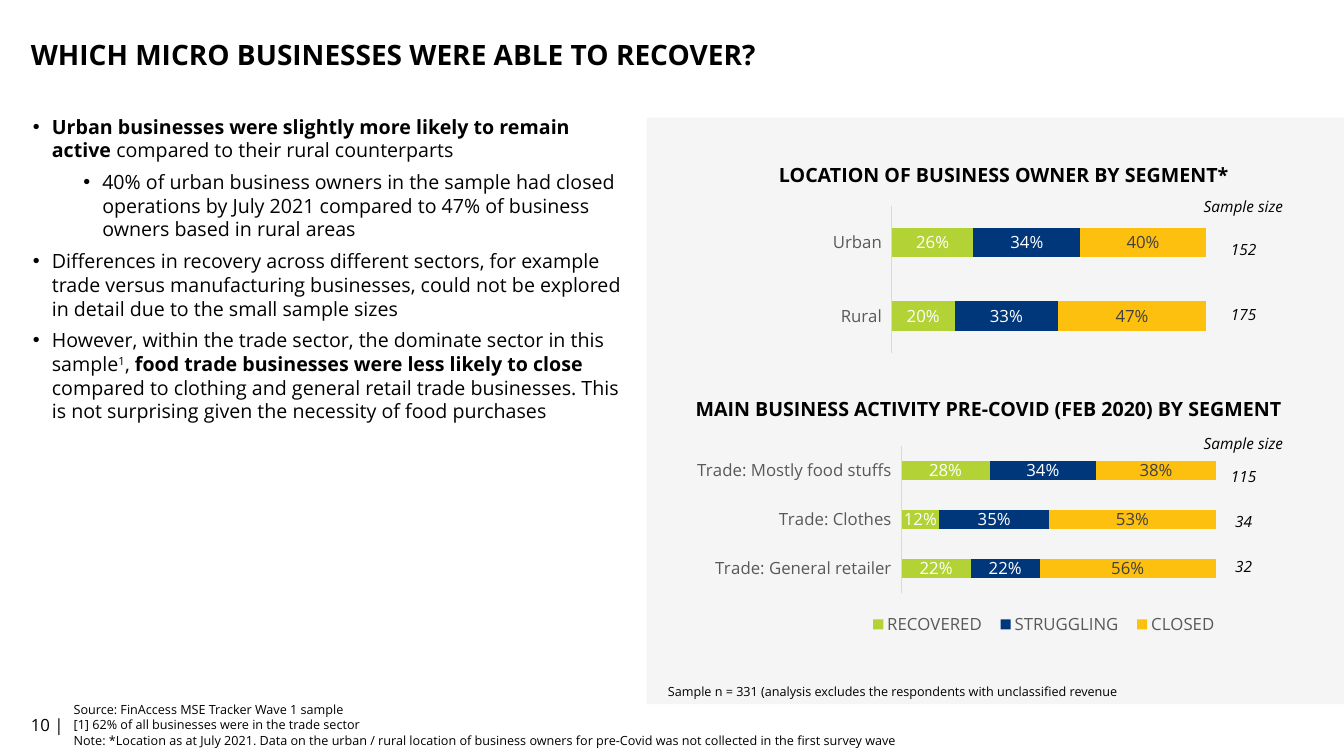
from dataclasses import dataclass

from lxml.etree import SubElement
from pptx import Presentation
from pptx.chart.data import CategoryChartData
from pptx.dml.color import RGBColor
from pptx.enum.chart import (XL_CHART_TYPE, XL_LABEL_POSITION,
                             XL_LEGEND_POSITION, XL_TICK_LABEL_POSITION,
                             XL_TICK_MARK)
from pptx.enum.shapes import MSO_SHAPE
from pptx.enum.text import MSO_ANCHOR, PP_ALIGN
from pptx.oxml import parse_xml
from pptx.oxml.ns import nsdecls, qn
from pptx.util import Pt


@dataclass(frozen=True)
class Theme:
    font: str = "Open Sans"
    black: str = "000000"
    white: str = "FFFFFF"
    dark: str = "404040"
    grey: str = "595959"
    line: str = "D9D9D9"
    panel: str = "F2F2F2"
    series: tuple = ("B3D235", "00377B", "FEC00F")
    title: int = 20
    body: int = 14
    label: int = 12
    sample: int = 11
    note: int = 9


T = Theme()
SEGMENTS = ("RECOVERED", "STRUGGLING", "CLOSED")
NO_GRID_STYLE = "{2D5ABB26-0587-4C30-8999-92F81FD0307C}"


def set_font(font, size, color=T.black, bold=False, italic=False):
    font.name, font.size = T.font, Pt(size)
    font.color.rgb = RGBColor.from_string(color)
    font.bold, font.italic = bold, italic


def add_run(p, text, size=T.body, bold=False, italic=False, sup=False):
    r = p.add_run()
    r.text = text
    set_font(r.font, size, bold=bold, italic=italic)
    if sup:
        r._r.get_or_add_rPr().set("baseline", "30000")


def add_text(s, text, box, anchor=MSO_ANCHOR.TOP, align=PP_ALIGN.LEFT,
             spacing=None, **fmt):
    tf = s.shapes.add_textbox(*map(Pt, box)).text_frame
    tf.word_wrap = True
    tf.vertical_anchor = anchor
    for i, line in enumerate(text.split("\n")):
        p = tf.add_paragraph() if i else tf.paragraphs[0]
        p.alignment = align
        p.line_spacing = spacing
        add_run(p, line, **fmt)


def add_bullets(s, items, box):
    """Each item is a level and a list of (text, format) runs."""
    tf = s.shapes.add_textbox(*map(Pt, box)).text_frame
    tf.word_wrap = True
    for i, (level, runs) in enumerate(items):
        p = tf.add_paragraph() if i else tf.paragraphs[0]
        p.level = level
        p.space_after = Pt(6)
        pPr = p._p.get_or_add_pPr()
        pPr.set("marL", str(Pt(13.5 + 36 * level)))
        pPr.set("indent", str(Pt(-13.5)))
        SubElement(pPr, qn("a:buFont")).set("typeface", "Arial")
        SubElement(pPr, qn("a:buChar")).set("char", "•")
        for text, fmt in runs:
            add_run(p, text, **fmt)


def add_panel(s, box):
    sp = s.shapes.add_shape(MSO_SHAPE.RECTANGLE, *map(Pt, box))
    sp.shadow.inherit = False
    sp.fill.solid()
    sp.fill.fore_color.rgb = RGBColor.from_string(T.panel)
    color = sp._element.spPr.find(".//" + qn("a:srgbClr"))
    SubElement(color, qn("a:alpha")).set("val", "70000")
    sp.line.fill.background()


def manual_layout(x, y, w, h, inner=False):
    target = '<c:layoutTarget val="inner"/>' if inner else ""
    return parse_xml(
        f'<c:layout {nsdecls("c")}><c:manualLayout>{target}'
        '<c:xMode val="edge"/><c:yMode val="edge"/>'
        f'<c:x val="{x}"/><c:y val="{y}"/><c:w val="{w}"/><c:h val="{h}"/>'
        '</c:manualLayout></c:layout>')


def replace_layout(element, layout, index):
    for old in element.findall(qn("c:layout")):
        element.remove(old)
    element.insert(index, layout)


def add_segment_chart(s, rows, box, legend=False):
    """Rows run from top to bottom: category, then one share per segment."""
    data = CategoryChartData(number_format="0%")
    rows = rows[::-1]
    data.categories = [row[0] for row in rows]
    for i, name in enumerate(SEGMENTS, 1):
        data.add_series(name, [row[i] for row in rows])
    chart = s.shapes.add_chart(XL_CHART_TYPE.BAR_STACKED_100,
                               *map(Pt, box), data).chart
    set_font(chart.font, T.label, T.grey)
    chart.has_title = False

    # Axes
    cat, val = chart.category_axis, chart.value_axis
    cat.major_tick_mark = XL_TICK_MARK.NONE
    cat.tick_label_position = XL_TICK_LABEL_POSITION.LOW
    set_font(cat.tick_labels.font, T.label, T.grey)
    cat.format.line.color.rgb = RGBColor.from_string(T.line)
    cat.format.line.width = Pt(0.75)
    val.visible = False
    val.has_major_gridlines = False
    val.minimum_scale, val.maximum_scale = 0, 1

    # Bars and their labels
    plot = chart.plots[0]
    plot.gap_width, plot.overlap = 150, 100
    plot.vary_by_categories = False
    for ser, color, ink in zip(plot.series, T.series,
                               (T.white, T.white, T.dark)):
        ser.format.fill.solid()
        ser.format.fill.fore_color.rgb = RGBColor.from_string(color)
        labels = ser.data_labels
        labels.show_value = True
        labels.position = XL_LABEL_POSITION.CENTER
        labels.number_format, labels.number_format_is_linked = "0%", False
        set_font(labels.font, T.label, ink)
    replace_layout(chart._chartSpace.chart.plotArea,
                   manual_layout(0.43, 0.03, 0.53, 0.71, inner=True), 0)

    chart.has_legend = legend
    if legend:
        chart.legend.position = XL_LEGEND_POSITION.BOTTOM
        chart.legend.include_in_layout = False
        set_font(chart.legend.font, T.label, T.grey)
        replace_layout(chart.legend._element,
                       manual_layout(0.36, 0.82, 0.62, 0.14), 1)


def add_sample_sizes(s, sizes, left, top, row_height):
    table = s.shapes.add_table(len(sizes), 1, Pt(left), Pt(top), Pt(44.6),
                               Pt(row_height * len(sizes))).table
    table.first_row = table.horz_banding = False
    table._tbl.tblPr.find(qn("a:tableStyleId")).text = NO_GRID_STYLE
    for i, size in enumerate(sizes):
        table.rows[i].height = Pt(row_height)
        cell = table.cell(i, 0)
        cell.fill.background()
        cell.vertical_anchor = MSO_ANCHOR.MIDDLE
        cell.margin_left = cell.margin_right = cell.margin_top = Pt(0.7)
        cell.margin_bottom = 0
        p = cell.text_frame.paragraphs[0]
        p.alignment = PP_ALIGN.CENTER
        add_run(p, str(size), T.sample, italic=True)


def main():
    prs = Presentation()
    prs.slide_width, prs.slide_height = Pt(960), Pt(540)
    s = prs.slides.add_slide(prs.slide_layouts[6])
    bold, plain = {"bold": True}, {}

    # Panel, title and footer
    add_panel(s, (462, 84, 498, 419))
    add_text(s, "WHICH MICRO BUSINESSES WERE ABLE TO RECOVER?",
             (15, 3.5, 848, 73.5), MSO_ANCHOR.MIDDLE, spacing=0.9,
             size=T.title, bold=True)
    add_text(s, "10 |", (15, 503.5, 50, 28.5), MSO_ANCHOR.MIDDLE, size=T.label)
    add_text(s, "Source: FinAccess MSE Tracker Wave 1 sample\n"
             "[1] 62% of all businesses were in the trade sector\n"
             "Note: *Location as at July 2021. Data on the urban / rural "
             "location of business owners for pre-Covid was not collected in "
             "the first survey wave",
             (45.5, 503.5, 798.5, 28.5), MSO_ANCHOR.MIDDLE, size=T.note)

    # Findings
    add_bullets(s, [
        (0, [("Urban businesses were slightly more likely to remain active ",
              bold), ("compared to their rural counterparts", plain)]),
        (1, [("40% of urban business owners in the sample had closed "
              "operations by July 2021 compared to 47% of business owners "
              "based in rural areas", plain)]),
        (0, [("Differences in recovery across different sectors, for example "
              "trade versus manufacturing businesses, could not be explored "
              "in detail due to the small sample sizes", plain)]),
        (0, [("However, within the trade sector, the dominate sector in this "
              "sample", plain), ("1", {"sup": True}), (", ", plain),
             ("food trade businesses were less likely to close ", bold),
             ("compared to clothing and general retail trade businesses. This "
              "is not surprising given the necessity of food purchases",
              plain)]),
    ], (16.5, 78.5, 437, 229))

    # Charts with their headings and sample sizes
    center = PP_ALIGN.CENTER
    for heading, left, top in (
            ("LOCATION OF BUSINESS OWNER BY SEGMENT*", 490.3, 113),
            ("MAIN BUSINESS ACTIVITY PRE-COVID (FEB 2020) BY SEGMENT",
             479.5, 280)):
        add_text(s, heading, (left, top, 453.6, 24.5), align=center, bold=True)
    for top in (137.5, 306.7):
        add_text(s, "Sample size", (841, top, 94.3, 21), align=center,
                 size=T.sample, italic=True)
    add_segment_chart(s, [("Urban", 0.26, 0.34, 0.40),
                          ("Rural", 0.20, 0.33, 0.47)],
                      (455, 142.5, 423.4, 148.3))
    add_sample_sizes(s, (152, 175), 866, 154.8, 46.4)
    add_segment_chart(s, [("Trade: Mostly food stuffs", 0.28, 0.34, 0.38),
                          ("Trade: Clothes", 0.12, 0.35, 0.53),
                          ("Trade: General retailer", 0.22, 0.22, 0.56)],
                      (462, 314, 423.4, 148.3), legend=True)
    add_sample_sizes(s, (115, 34, 32), 866, 324, 32.2)
    add_text(s, "Sample n = 331 (analysis excludes the respondents with "
             "unclassified revenue", (470, 485.3, 393, 18), size=T.note)

    prs.save("out.pptx")


if __name__ == "__main__":
    main()
